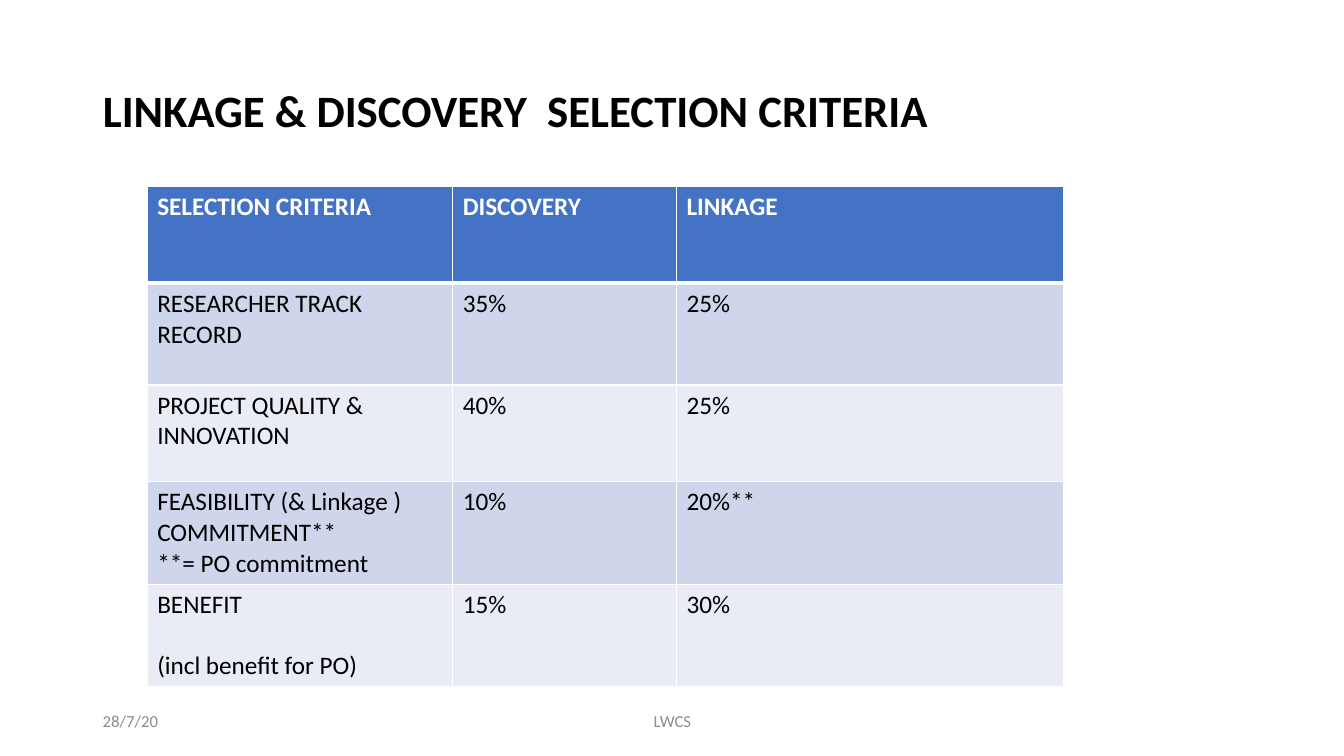
from dataclasses import dataclass

from lxml.etree import SubElement
from pptx import Presentation
from pptx.dml.color import RGBColor
from pptx.enum.text import MSO_ANCHOR, MSO_AUTO_SIZE, PP_ALIGN
from pptx.oxml.ns import qn
from pptx.slide import Slide
from pptx.table import _Cell
from pptx.text.text import TextFrame
from pptx.util import Inches, Pt

FONT = "Calibri"
WHITE, BLACK, GREY = "FFFFFF", "000000", "8C8C8C"
HEADER_FILL = "4472C4"
BAND_FILLS = ("CFD5EA", "E9EBF5")
COLUMN_WIDTHS = (3.03, 2.22, 3.84)
HEADINGS = ("SELECTION CRITERIA", "DISCOVERY", "LINKAGE")


@dataclass
class Criterion:
    name: str
    discovery: str
    linkage: str
    height: float
    gap: float = 0


@dataclass
class FooterText:
    text: str
    left: float
    width: float
    align: PP_ALIGN


CRITERIA = (
    Criterion("RESEARCHER TRACK RECORD", "35%", "25%", 1.01),
    Criterion("PROJECT QUALITY & INNOVATION", "40%", "25%", 0.96),
    Criterion("FEASIBILITY (& Linkage ) COMMITMENT**\n**= PO commitment",
              "10%", "20%**", 1.01),
    Criterion("BENEFIT\n(incl benefit for PO)", "15%", "30%", 1.01, gap=22),
)
FOOTERS = (
    FooterText("28/7/20", 0.92, 3, PP_ALIGN.LEFT),
    FooterText("LWCS", 4.42, 4.5, PP_ALIGN.CENTER),
)


def rgb(value: str) -> RGBColor:
    return RGBColor.from_string(value)


def write(tf: TextFrame, text: str, *, size: float = 18, color: str = BLACK,
          bold: bool = False, align: PP_ALIGN = PP_ALIGN.LEFT,
          line: float = 1.0, gap: float = 0) -> None:
    tf.word_wrap = True
    for i, words in enumerate(text.split("\n")):
        p = tf.add_paragraph() if i else tf.paragraphs[0]
        p.alignment = align
        p.line_spacing = line
        p.space_before = Pt(gap if i else 0)
        r = p.add_run()
        r.text = words
        r.font.name = FONT
        r.font.size = Pt(size)
        r.font.bold = bold
        r.font.color.rgb = rgb(color)


def style_cell(cell: _Cell, fill: str, top: float, bottom: float) -> None:
    tc_pr = cell._tc.get_or_add_tcPr()
    for side, width in (("L", 1), ("R", 1), ("T", top), ("B", bottom)):
        ln = SubElement(tc_pr, qn(f"a:ln{side}"), w=str(Pt(width)))
        SubElement(SubElement(ln, qn("a:solidFill")), qn("a:srgbClr"), val=WHITE)
    cell.fill.solid()
    cell.fill.fore_color.rgb = rgb(fill)


def add_title(s: Slide, text: str) -> None:
    sp = s.shapes.title
    sp.left, sp.top = Inches(0.92), Inches(0.4)
    sp.width, sp.height = Inches(11.5), Inches(1.45)
    tf = sp.text_frame
    tf.auto_size = MSO_AUTO_SIZE.NONE
    tf.vertical_anchor = MSO_ANCHOR.MIDDLE
    write(tf, text, size=32, bold=True, line=0.9)


def add_criteria_table(s: Slide) -> None:
    heights = [0.96] + [c.height for c in CRITERIA]
    table = s.shapes.add_table(
        len(heights), len(COLUMN_WIDTHS), Inches(1.46), Inches(1.85),
        Inches(sum(COLUMN_WIDTHS)), Inches(sum(heights))).table
    for column, width in zip(table.columns, COLUMN_WIDTHS):
        column.width = Inches(width)
    for row, height in zip(table.rows, heights):
        row.height = Inches(height)
    for col, heading in enumerate(HEADINGS):
        cell = table.cell(0, col)
        style_cell(cell, HEADER_FILL, 1, 3)
        write(cell.text_frame, heading, color=WHITE, bold=True)
    for row, c in enumerate(CRITERIA, 1):
        for col, text in enumerate((c.name, c.discovery, c.linkage)):
            cell = table.cell(row, col)
            style_cell(cell, BAND_FILLS[(row - 1) % 2], 3 if row == 1 else 1, 1)
            write(cell.text_frame, text, gap=c.gap)


def add_footer(s: Slide, footer: FooterText) -> None:
    sp = s.shapes.add_textbox(Inches(footer.left), Inches(6.95),
                              Inches(footer.width), Inches(0.4))
    sp.text_frame.vertical_anchor = MSO_ANCHOR.MIDDLE
    write(sp.text_frame, footer.text, size=12, color=GREY, align=footer.align)


def main() -> None:
    prs = Presentation()
    prs.slide_width, prs.slide_height = Inches(13.33), Inches(7.5)
    s = prs.slides.add_slide(prs.slide_layouts[5])
    add_title(s, "LINKAGE & DISCOVERY  SELECTION CRITERIA")
    add_criteria_table(s)
    for footer in FOOTERS:
        add_footer(s, footer)
    prs.save("out.pptx")


if __name__ == "__main__":
    main()
